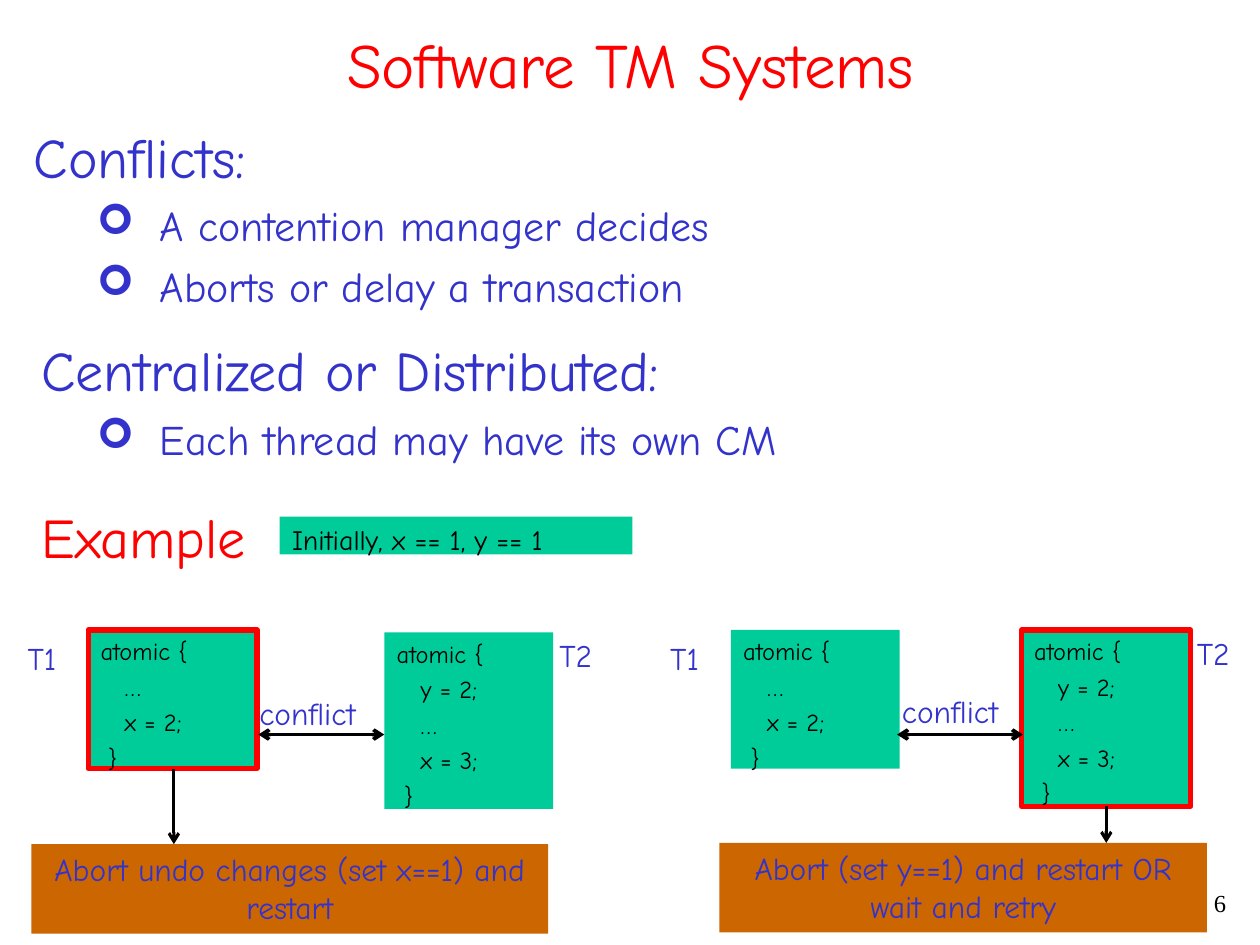
import pptx
import pptx.util
import pptx.dml.color
import pptx.enum.shapes
import pptx.enum.text
import pptx.oxml
import pptx.oxml.ns

PX = 9144
INK, BLUE, RED, GREEN, BROWN = "000000", "3333CC", "FF0000", "00CC99", "CC6600"
ALIGN = pptx.enum.text.PP_ALIGN
ANCHOR = pptx.enum.text.MSO_ANCHOR


def color(hex_code):
    return pptx.dml.color.RGBColor.from_string(hex_code)


def add_element(parent, tag, **attributes):
    element = pptx.oxml.parse_xml(f"<{tag} {pptx.oxml.ns.nsdecls('a')}/>")
    for name, value in attributes.items():
        element.set(name, str(value))
    parent.append(element)


class Deck:
    """Holds the lettering style and the slide being drawn."""

    def __init__(self, width, height):
        self.font = "Comic Neue"
        self.show = pptx.Presentation()
        self.show.slide_width, self.show.slide_height = width * PX, height * PX
        self.slide = self.show.slides.add_slide(self.show.slide_layouts[6])

    def letter(self, frame, lines, size, ink, align=ALIGN.LEFT, anchor=ANCHOR.TOP, font=None):
        settings = {"word_wrap": True, "vertical_anchor": anchor,
                    "margin_left": 10 * PX, "margin_right": 10 * PX,
                    "margin_top": 5 * PX, "margin_bottom": 5 * PX}
        for name, value in settings.items():
            setattr(frame, name, value)
        for index, line in enumerate(lines):
            line = {"size": size, "ink": ink, "indent": 0, "hang": 0, **line}
            paragraph = frame.paragraphs[0] if index == 0 else frame.add_paragraph()
            paragraph.alignment = align
            gap = line["size"] * 0.25 if index else 0
            paragraph.space_before = pptx.util.Pt(line.get("gap", gap))
            properties = paragraph._p.get_or_add_pPr()
            properties.set("marL", str(line["indent"] * PX))
            properties.set("indent", str(-line["hang"] * PX))
            if "bullet" in line:
                add_element(properties, "a:buFont", typeface="Wingdings")
                add_element(properties, "a:buChar", char=line["bullet"])
            run = paragraph.add_run()
            run.text = line["text"]
            lettering = {"name": font or self.font, "size": pptx.util.Pt(line["size"])}
            for name, value in lettering.items():
                setattr(run.font, name, value)
            run.font.color.rgb = color(line["ink"])

    def text(self, box, lines, size, ink, **style):
        label = self.slide.shapes.add_textbox(*(side * PX for side in box))
        self.letter(label.text_frame, lines, size, ink, **style)

    def panel(self, box, fill, lines, size, ink, border=None, **style):
        rect = self.slide.shapes.add_shape(
            pptx.enum.shapes.MSO_SHAPE.RECTANGLE, *(side * PX for side in box))
        rect.shadow.inherit = False
        rect.fill.solid()
        rect.fill.fore_color.rgb = color(fill)
        if border:
            rect.line.color.rgb = color(border)
            rect.line.width = pptx.util.Pt(3)
        else:
            rect.line.fill.background()
        self.letter(rect.text_frame, lines, size, ink, **style)

    def arrow(self, start, end, weight, both=False):
        arrow = self.slide.shapes.add_connector(
            pptx.enum.shapes.MSO_CONNECTOR.STRAIGHT,
            *(value * PX for value in (*start, *end)))
        arrow.line.color.rgb = color(INK)
        arrow.line.width = pptx.util.Pt(weight)
        for tag in ("a:headEnd", "a:tailEnd") if both else ("a:tailEnd",):
            add_element(arrow.line._ln, tag, type="arrow")
        add_element(arrow._element.spPr, "a:effectLst")


def atomic_block(*statements):
    body = [{"text": statement, "indent": 19} for statement in statements]
    return [{"text": "atomic {"}, *body, {"text": "}", "indent": 6}]


def main():
    deck = Deck(1000, 750)
    deck.text((17, 17, 967, 67), [{"text": "Software TM Systems"}], 36, RED,
              align=ALIGN.CENTER, anchor=ANCHOR.MIDDLE)
    point = {"size": 24, "indent": 100, "hang": 50, "bullet": "➢"}
    deck.text((17, 92, 967, 600), [
        {"text": "Conflicts:", "indent": 38, "hang": 38},
        {"text": "A contention manager decides", **point},
        {"text": "Aborts or delay a transaction", **point},
        {"text": "Centralized or Distributed:", "indent": 6, "gap": 14},
        {"text": "Each thread may have its own CM", **point},
        {"text": "Example", "indent": 6, "gap": 22, "ink": RED},
    ], 32, BLUE)
    deck.text((775, 700, 208, 33), [{"text": "6"}], 14, INK,
              align=ALIGN.RIGHT, font="Times New Roman")
    deck.panel((222, 410, 280, 30), GREEN, [{"text": "Initially, x == 1, y == 1"}], 16, INK)

    scenarios = [
        {"first": 70, "second": (305, 502), "borders": (RED, None),
         "labels": {"T1": (12, 502), "T2": (434, 500), "conflict": (196, 546)},
         "clash": 205, "abort": (138, 610), "outcome": (25, 670, 410, 71),
         "verdict": "Abort undo changes (set x==1) and restart"},
        {"first": 580, "second": (811, 500), "borders": (None, RED),
         "labels": {"T1": (522, 502), "T2": (940, 498), "conflict": (706, 544)},
         "clash": 712, "abort": (878, 640), "outcome": (571, 669, 387, 71),
         "verdict": "Abort (set y==1) and restart OR wait and retry"},
    ]
    for scenario in scenarios:
        first_border, second_border = scenario["borders"]
        deck.panel((scenario["first"], 500, 134, 110), GREEN,
                   atomic_block("…", "x = 2;"), 14, INK, first_border)
        deck.panel((*scenario["second"], 134, 140), GREEN,
                   atomic_block("y = 2;", "…", "x = 3;"), 14, INK, second_border)
        for label, corner in scenario["labels"].items():
            width = 197 if label == "conflict" else 58
            deck.text((*corner, width, 40), [{"text": label}], 18, BLUE)
        clash = scenario["clash"]
        deck.arrow((clash, 583), (clash + 100, 583), 2, both=True)
        deck.panel(scenario["outcome"], BROWN, [{"text": scenario["verdict"]}], 18, BLUE,
                   align=ALIGN.CENTER)
        abort_x, abort_y = scenario["abort"]
        deck.arrow((abort_x, abort_y), (abort_x, scenario["outcome"][1]), 1.75)
    deck.show.save("out.pptx")


if __name__ == "__main__":
    main()
